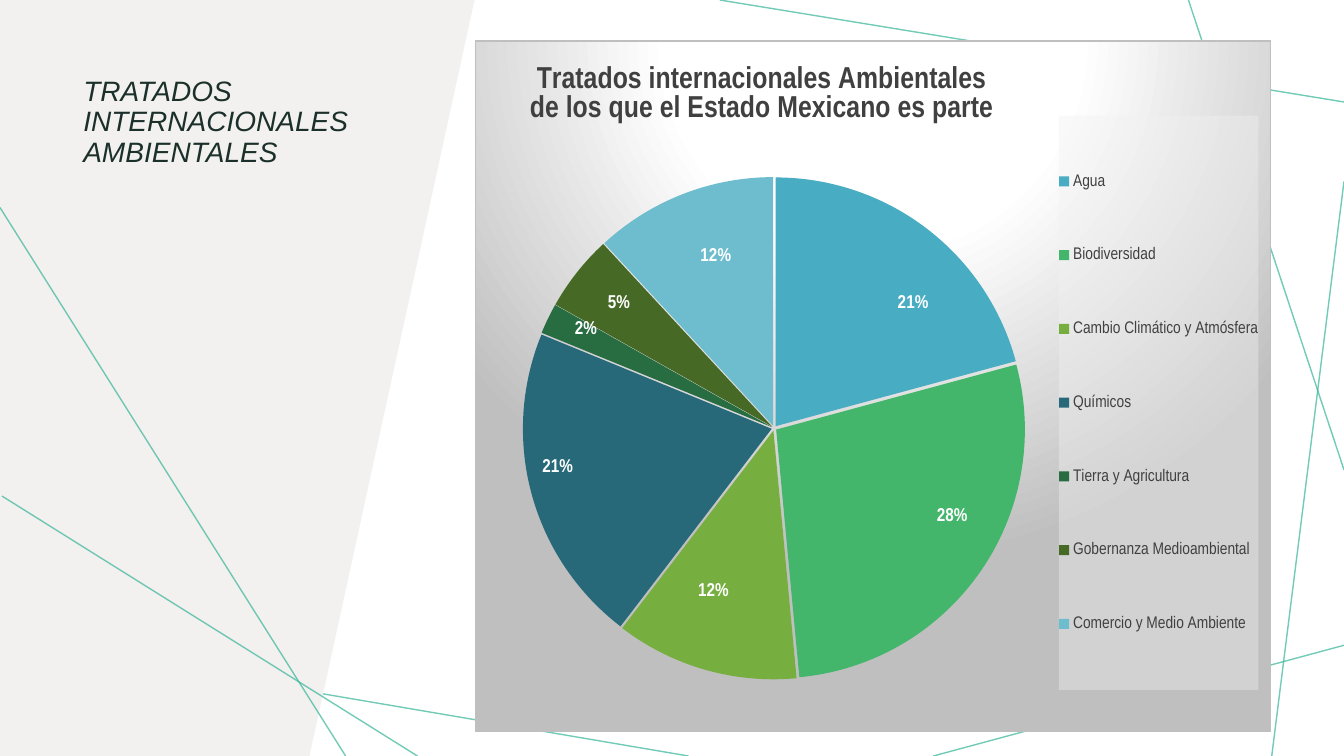
from math import cos, pi, sin

from lxml import etree
from pptx import Presentation
from pptx.chart.data import CategoryChartData
from pptx.dml.color import RGBColor
from pptx.enum.chart import XL_CHART_TYPE, XL_LABEL_POSITION, XL_LEGEND_POSITION
from pptx.enum.shapes import MSO_CONNECTOR
from pptx.oxml import parse_xml
from pptx.oxml.ns import nsdecls, qn
from pptx.util import Cm, Pt

PIE, STRAIGHT = XL_CHART_TYPE.PIE, MSO_CONNECTOR.STRAIGHT
RIGHT, CENTER = XL_LEGEND_POSITION.RIGHT, XL_LABEL_POSITION.CENTER

W, H = 33.87, 19.05
COLORS = {"line": "37B598", "panel": "F3F1F0", "title": "1B302B", "text": "404040",
          "white": "FFFFFF", "grey": "BFBFBF", "legend": "F2F2F2"}
BACK_LINES = [(17.35, H, 0, 16.1), (W, 16.26, 23.52, H), (W, 4.57, 32.05, H),
              (W, 11.84, 29.95, 0), (W, 2.57, 18.14, 0)]
FRONT_LINES = [(10.52, H, 0.05, 12.5), (0, 5.23, 8.71, H)]
PANEL = [(7.8, H), (0, H), (0, 0), (11.96, 0)]

CHART = (11.96, 1.02, 20.07, 17.42)
CHART_TITLE = ["Tratados internacionales Ambientales",
               "de los que el Estado Mexicano es parte"]
# Category, percentage, colour, label centre relative to the pie centre (cm)
SLICES = [("Agua", 21, "48ACC3", 3.48, -3.1),
          ("Biodiversidad", 28, "43B66C", 4.46, 2.22),
          ("Cambio Climático y Atmósfera", 12, "76AF40", -1.51, 4.08),
          ("Químicos", 21, "286979", -5.42, 0.98),
          ("Tierra y Agricultura", 2, "286D41", -4.71, -2.47),
          ("Gobernanza Medioambiental", 5, "476926", -3.88, -3.12),
          ("Comercio y Medio Ambiente", 12, "6DBDCF", -1.46, -4.28)]
RADIUS = 6.33


def rgb(name):
    return RGBColor.from_string(COLORS.get(name, name))


def set_font(font, color, **values):
    for key, value in values.items():
        setattr(font, key, value)
    font.color.rgb = rgb(color)


def add_lines(s, lines):
    for ends in lines:
        c = s.shapes.add_connector(STRAIGHT, *(Cm(v) for v in ends))
        c.line.width = Pt(1)
        c.line.color.rgb = rgb("line")
        clr = c.line._get_or_add_ln().find(".//" + qn("a:srgbClr"))
        etree.SubElement(clr, qn("a:alpha")).set("val", "70000")
        etree.SubElement(c._element.spPr, qn("a:effectLst"))


def add_panel(s):
    start, *rest = [(Cm(x), Cm(y)) for x, y in PANEL]
    fb = s.shapes.build_freeform(*start)
    fb.add_line_segments(rest, close=True)
    sp = fb.convert_to_shape()
    sp.shadow.inherit = False
    sp.fill.solid()
    sp.fill.fore_color.rgb = rgb("panel")
    sp.line.fill.background()


def add_title(s):
    tf = s.shapes.add_textbox(Cm(1.85), Cm(1.83), Cm(8.23), Cm(8.1)).text_frame
    tf.word_wrap = True
    p = tf.paragraphs[0]
    p.line_spacing = 0.9
    r = p.add_run()
    r.text = "TRATADOS INTERNACIONALES AMBIENTALES"
    set_font(r.font, "title", name="Arial", size=Pt(20), italic=True)


def layout(x, y, w=None, h=None, inner=False, edge=True):
    """Manual chart layout; all values are fractions of the chart."""
    parts = '<c:layoutTarget val="inner"/>' if inner else ""
    if edge:
        parts += '<c:xMode val="edge"/><c:yMode val="edge"/>'
    for tag, value in zip("xywh", (x, y, w, h)):
        if value is not None:
            parts += f'<c:{tag} val="{value:.3f}"/>'
    return parse_xml(f'<c:layout {nsdecls("c")}><c:manualLayout>{parts}'
                     '</c:manualLayout></c:layout>')


def place(element, new_layout, after=None):
    for old in element.findall(qn("c:layout")):
        element.remove(old)
    if after is None:
        element.insert(0, new_layout)
    else:
        element.find(qn(after)).addnext(new_layout)


def style_background(chart):
    stops = "".join(f'<a:gs pos="{pos}"><a:srgbClr val="{COLORS[c]}"/></a:gs>'
                    for pos, c in ((0, "white"), (39000, "white"), (100000, "grey")))
    chart._chartSpace.find(qn("c:chart")).addnext(parse_xml(
        f'<c:spPr {nsdecls("c", "a")}><a:gradFill><a:gsLst>{stops}</a:gsLst>'
        '<a:path path="circle"><a:fillToRect l="50000" t="-80000" r="50000" b="180000"/>'
        f'</a:path></a:gradFill><a:ln w="9525"><a:solidFill><a:srgbClr val="{COLORS["grey"]}"/>'
        '</a:solidFill></a:ln></c:spPr>'))


def style_title(chart):
    chart.has_title = True
    title = chart.chart_title
    p = title.text_frame.paragraphs[0]
    for i, text in enumerate(CHART_TITLE):
        if i:
            p.add_line_break()
        r = p.add_run()
        r.text = text
        set_font(r.font, "text", name="Arial Narrow", size=Pt(21.6), bold=True)
    title.include_in_layout = False
    place(title._element, layout(0.065, 0.03), after="c:tx")


def style_legend(chart):
    chart.has_legend = True
    legend = chart.legend
    legend.position = RIGHT
    legend.include_in_layout = False
    set_font(legend.font, "text", name="Arial Narrow", size=Pt(12))
    place(legend._element, layout(0.734, 0.108, 0.251, 0.832), after="c:legendPos")
    legend._element.find(qn("c:txPr")).addprevious(parse_xml(
        f'<c:spPr {nsdecls("c", "a")}><a:solidFill><a:srgbClr val="{COLORS["legend"]}">'
        '<a:alpha val="39000"/></a:srgbClr></a:solidFill></c:spPr>'))


def style_slices(plot):
    plot.vary_by_categories = True
    series = plot.series[0]
    labels = series.data_labels
    labels.show_percentage, labels.show_value = True, False
    labels.number_format, labels.number_format_is_linked = "0%", False
    labels.position = CENTER
    set_font(labels.font, "white", name="Arial Narrow", size=Pt(13.3), bold=True)
    total, done = sum(row[1] for row in SLICES), 0
    for i, (_, value, color, x, y) in enumerate(SLICES):
        fill = series.points[i].format.fill
        fill.solid()
        fill.fore_color.rgb = rgb(color)
        # Label offset from the middle of its slice
        angle = 2 * pi * (done + value / 2) / total
        done += value
        dx = (x - RADIUS / 2 * sin(angle)) / CHART[2]
        dy = (y + RADIUS / 2 * cos(angle)) / CHART[3]
        label = series.points[i].data_label
        label.position = CENTER
        set_font(label.font, "white", name="Arial Narrow", size=Pt(13.3), bold=True)
        dlbl = labels._element.findall(qn("c:dLbl"))[i]
        place(dlbl, layout(dx, dy, edge=False), after="c:idx")
        for tag, shown in (("c:showVal", "0"), ("c:showPercent", "1")):
            dlbl.find(qn(tag)).set("val", shown)
    explosion = parse_xml(f'<c:explosion {nsdecls("c")} val="1"/>')
    series._element.find(qn("c:dPt")).addprevious(explosion)


def add_pie(s):
    data = CategoryChartData()
    data.categories = [row[0] for row in SLICES]
    data.add_series("Series 1", [row[1] for row in SLICES])
    chart = s.shapes.add_chart(PIE, *(Cm(v) for v in CHART), data).chart
    set_font(chart.font, "000000", name="Arial Narrow", size=Pt(10))
    style_background(chart)
    style_title(chart)
    style_legend(chart)
    style_slices(chart.plots[0])
    plot_area = chart._chartSpace.find(".//" + qn("c:plotArea"))
    place(plot_area, layout(0.06, 0.197, 0.632, 0.728, inner=True))


def main():
    prs = Presentation()
    prs.slide_width, prs.slide_height = Cm(W), Cm(H)
    s = prs.slides.add_slide(prs.slide_layouts[6])
    # Backdrop
    add_lines(s, BACK_LINES)
    add_panel(s)
    # Content
    add_title(s)
    add_lines(s, FRONT_LINES)
    add_pie(s)
    prs.save("out.pptx")


if __name__ == "__main__":
    main()
